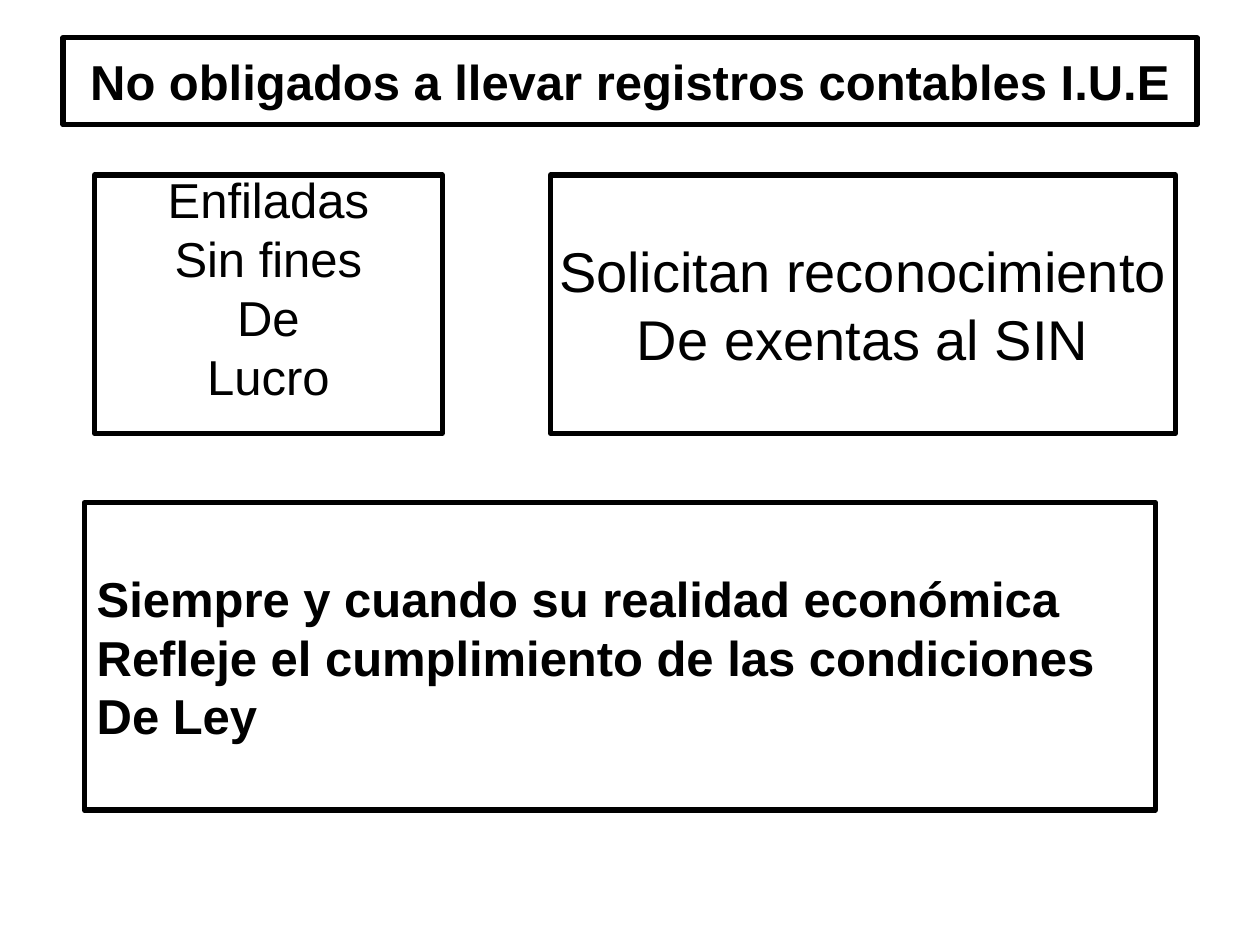
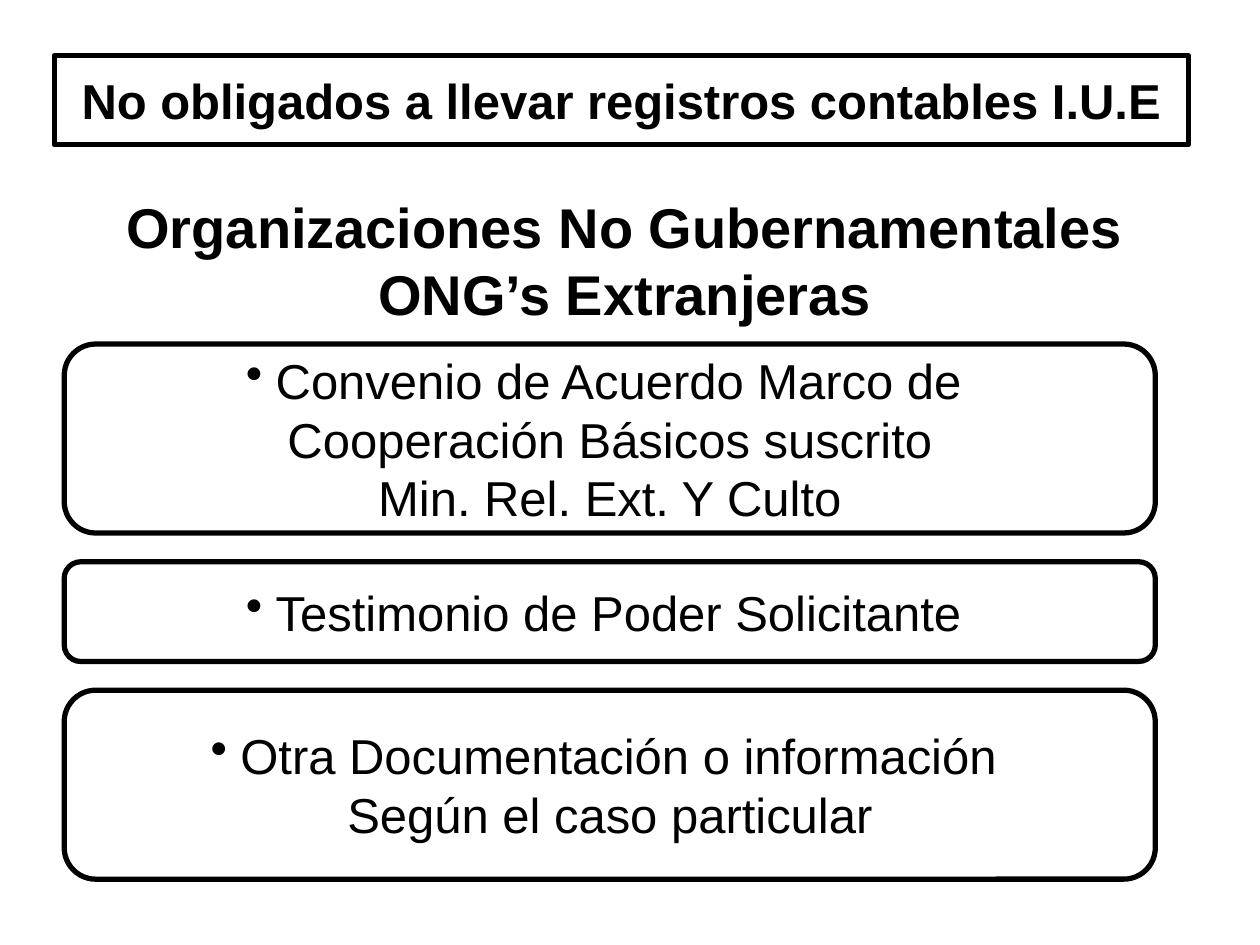
from lxml import etree
from pptx import Presentation
from pptx.dml.color import RGBColor
from pptx.enum.shapes import MSO_SHAPE as Shape
from pptx.enum.text import MSO_ANCHOR as Anchor, MSO_AUTO_SIZE as AutoSize, PP_ALIGN as Align
from pptx.oxml.ns import qn
from pptx.util import Pt

# Content
TITLE = "No obligados a llevar registros contables I.U.E"
ENTITIES = ["Enfiladas", "Sin fines", "De", "Lucro"]
REQUEST = ["Solicitan reconocimiento", "De exentas al SIN"]
CONDITION = [
    "Siempre y cuando su realidad económica",
    "Refleje el cumplimiento de las condiciones",
    "De Ley",
]
ORGANIZATIONS = ["Organizaciones No Gubernamentales", "ONG’s Extranjeras"]
REQUIREMENTS = [  # height, lines
    (108, ["Convenio de Acuerdo Marco de", "Cooperación Básicos suscrito",
           "Min. Rel. Ext. Y Culto"]),
    (57, ["Testimonio de Poder Solicitante"]),
    (108, ["Otra Documentación o información", "Según el caso particular"]),
]

# Shared style
FONT, INK = "Arial", "000000"
BODY_SIZE, LARGE_SIZE = 28, 32
REQUIREMENT_TOP, REQUIREMENT_GAP = 196.6, 16.4


def color(hex_text):
    return RGBColor.from_string(hex_text)


def outline(box):
    box.fill.background()
    box.line.color.rgb = color(INK)
    box.line.width = Pt(3)


def write(box, lines, size=BODY_SIZE, bold=False, align=Align.CENTER,
          anchor=Anchor.MIDDLE, wrap=False, bullet=False, spacing=None, before=0):
    frame = box.text_frame
    frame.auto_size = AutoSize.NONE
    frame.word_wrap = wrap
    frame.vertical_anchor = anchor
    for index, line in enumerate(lines):
        para = frame.add_paragraph() if index else frame.paragraphs[0]
        para.alignment = align
        para.line_spacing = spacing
        para.space_before = Pt(before if index else 0)
        if bullet and index == 0:
            etree.SubElement(para._p.get_or_add_pPr(), qn("a:buChar")).set("char", "•")
        span = para.add_run()
        span.text = line
        font = span.font
        font.name, font.size, font.bold = FONT, Pt(size), bold
        font.color.rgb = color(INK)


def add_box(page, kind, left, top, width, height, lines, **style):
    box = page.shapes.add_shape(kind, Pt(left), Pt(top), Pt(width), Pt(height))
    box.shadow.inherit = False
    outline(box)
    write(box, lines, **style)


def add_page(deck, left, top, height):
    page = deck.slides.add_slide(deck.slide_layouts[5])
    title = page.shapes.title
    title.left, title.top, title.width, title.height = Pt(left), Pt(top), Pt(648), Pt(height)
    outline(title)
    etree.SubElement(title.line._get_or_add_ln(), qn("a:round"))
    write(title, [TITLE], bold=True, wrap=True)
    return page


def build_exempt_page(deck):
    page = add_page(deck, 36, 21.6, 49.7)
    row_top, row_height = 100, 147.6
    add_box(page, Shape.RECTANGLE, 54, row_top, 198.7, row_height, ENTITIES,
            anchor=Anchor.TOP, spacing=0.8, before=6.7)
    add_box(page, Shape.RECTANGLE, 314.6, row_top, 357.1, row_height, REQUEST,
            size=LARGE_SIZE)
    add_box(page, Shape.RECTANGLE, 48.2, 287.3, 612, 175.7, CONDITION,
            bold=True, align=Align.LEFT, wrap=True)


def build_foreign_page(deck):
    page = add_page(deck, 31, 31.7, 51.1)
    heading = page.shapes.add_textbox(Pt(36.7), Pt(105.8), Pt(640.8), Pt(85))
    write(heading, ORGANIZATIONS, size=LARGE_SIZE, bold=True)

    # Stack of requirements with equal gaps
    top = REQUIREMENT_TOP
    for height, lines in REQUIREMENTS:
        add_box(page, Shape.ROUNDED_RECTANGLE, 36.7, top, 623.5, height, lines, bullet=True)
        top += height + REQUIREMENT_GAP


def main():
    deck = Presentation()
    deck.slide_width, deck.slide_height = Pt(720), Pt(540)
    build_exempt_page(deck)
    build_foreign_page(deck)
    deck.save("out.pptx")


if __name__ == "__main__":
    main()
